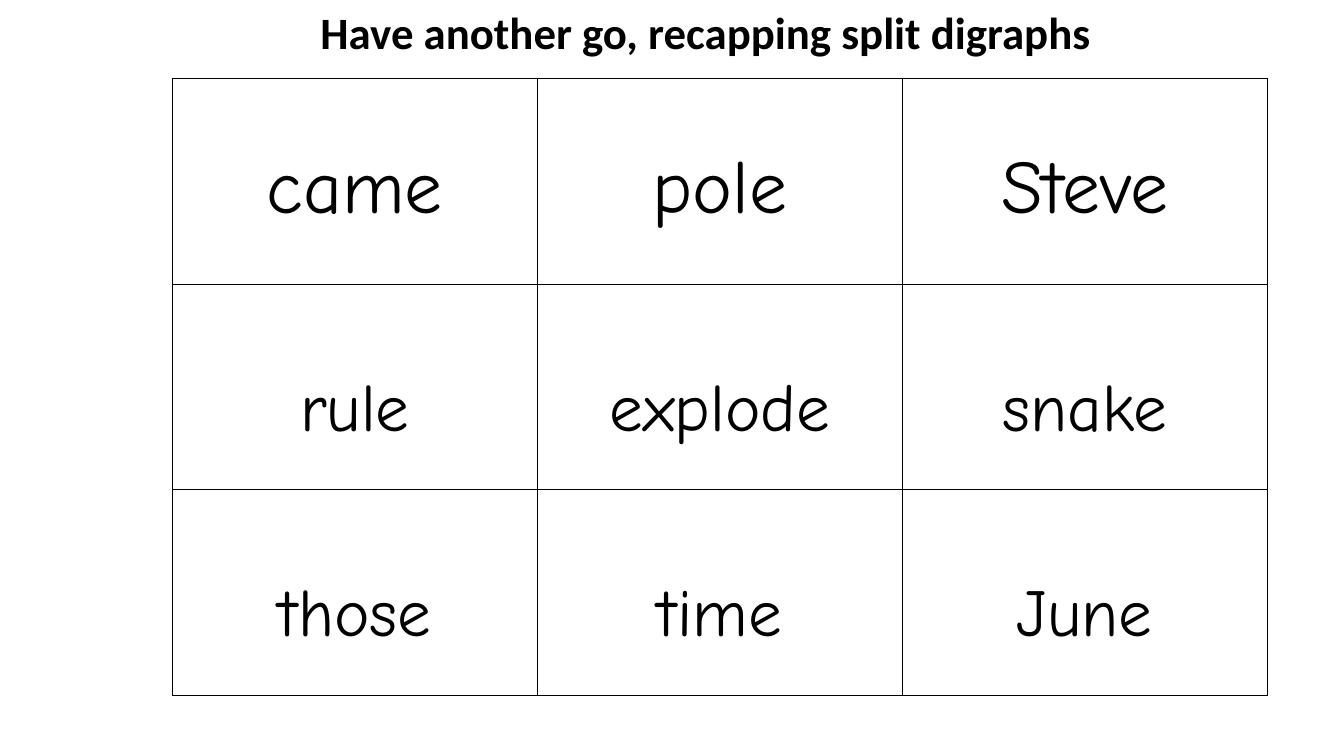
from lxml.etree import SubElement
from pptx import Presentation
from pptx.dml.color import RGBColor
from pptx.enum.text import MSO_ANCHOR, PP_ALIGN
from pptx.oxml.ns import qn
from pptx.util import Inches, Pt

TITLE = "Have another go, recapping split digraphs"
# words, text size in points, space above the word in inches
ROWS = [
    (["came", "pole", "Steve"], 54, 0.66),
    (["rule", "explode", "snake"], 48, 0.86),
    (["those", "time", "June"], 48, 0.86),
]
LEFT, TOP = 1.71, 0.78
CELL_W, CELL_H = 3.62, 2.04
BLACK = RGBColor(0, 0, 0)


def style(frame, font, size, bold=False):
    para = frame.paragraphs[0]
    para.alignment = PP_ALIGN.CENTER
    face = para.runs[0].font
    face.name, face.size, face.bold = font, Pt(size), bold
    face.color.rgb = BLACK


def border(cell):
    props = cell._tc.get_or_add_tcPr()
    for side in ("a:lnL", "a:lnR", "a:lnT", "a:lnB"):
        line = SubElement(props, qn(side), w=str(Pt(1)))
        fill = SubElement(line, qn("a:solidFill"))
        SubElement(fill, qn("a:srgbClr"), val=str(BLACK))


def add_title(slide):
    title = slide.shapes.title
    title.left, title.top = Inches(3), Inches(0)
    title.width, title.height = Inches(8), Inches(0.64)
    frame = title.text_frame
    frame.text = TITLE
    frame.word_wrap = False
    frame.vertical_anchor = MSO_ANCHOR.TOP
    style(frame, "Calibri", 32, True)


def add_words(slide):
    count = len(ROWS[0][0])
    table = slide.shapes.add_table(
        len(ROWS), count, Inches(LEFT), Inches(TOP),
        Inches(CELL_W * count), Inches(CELL_H * len(ROWS))).table
    table.first_row = table.horz_banding = False
    for col in table.columns:
        col.width = Inches(CELL_W)
    for r, (words, size, gap) in enumerate(ROWS):
        table.rows[r].height = Inches(CELL_H)
        for c, word in enumerate(words):
            cell = table.cell(r, c)
            cell.text_frame.text = word
            cell.margin_top = Inches(gap)
            style(cell.text_frame, "Comic Neue", size)
            border(cell)
            cell.fill.background()


def main():
    deck = Presentation()
    deck.slide_width, deck.slide_height = Inches(13.33), Inches(7.5)
    slide = deck.slides.add_slide(deck.slide_layouts[5])
    add_title(slide)
    add_words(slide)
    deck.save("out.pptx")


if __name__ == "__main__":
    main()
